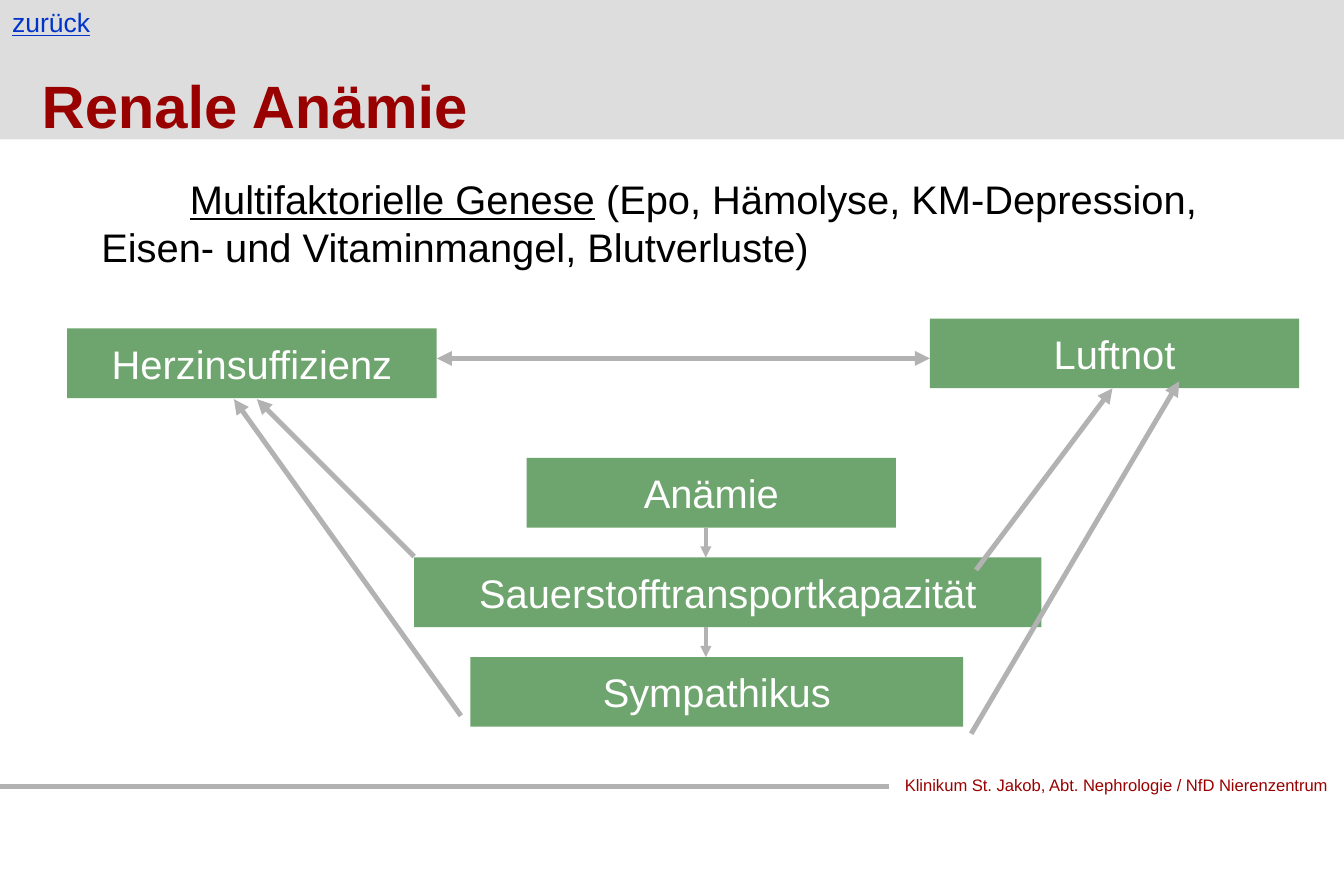
from dataclasses import dataclass

from lxml.etree import SubElement
from pptx import Presentation
from pptx.dml.color import RGBColor
from pptx.enum.shapes import MSO_CONNECTOR, MSO_SHAPE
from pptx.enum.text import MSO_ANCHOR, PP_ALIGN
from pptx.oxml.ns import qn
from pptx.slide import Slide
from pptx.util import Inches, Length, Pt

# Grid: twelve columns and twelve rows to the inch
COLUMNS, ROWS, CELL = 135, 90, Inches(1) // 12
BOX_WIDTH, BOX_HEIGHT = 37.1, 7
AXIS = 70.9

FONT = "Arial"
BAND_GREY = RGBColor(0xDD, 0xDD, 0xDD)
LINE_GREY = RGBColor(0xB2, 0xB2, 0xB2)
GREEN = RGBColor(0x6E, 0xA4, 0x6E)
RED = RGBColor(0x99, 0x00, 0x00)
BLUE = RGBColor(0x00, 0x33, 0xCC)
BLACK = RGBColor(0x00, 0x00, 0x00)
WHITE = RGBColor(0xFF, 0xFF, 0xFF)


@dataclass(frozen=True)
class Label:
    text: str
    column: float
    row: float
    width: float
    height: float
    size: float = 24
    color: RGBColor = WHITE
    align: PP_ALIGN = PP_ALIGN.CENTER
    anchor: MSO_ANCHOR = MSO_ANCHOR.MIDDLE
    wrap: bool = False
    bold: bool = False
    underlined: str = ""
    first_indent: float = 0


@dataclass(frozen=True)
class Line:
    start: tuple[float, float]
    end: tuple[float, float]
    width: float = 3
    ends: tuple[str, ...] = ("tailEnd",)


FOOTER = Label("Klinikum St. Jakob, Abt. Nephrologie / NfD Nierenzentrum",
               87.8, 77.2, 46.7, 3.2, 10, RED, PP_ALIGN.RIGHT, MSO_ANCHOR.TOP, True)
CAUSES = Label(" (Epo, Hämolyse, KM-Depression, Eisen- und Vitaminmangel, Blutverluste)",
               9, 17, 114.7, 10.9, 24, BLACK, PP_ALIGN.LEFT, MSO_ANCHOR.TOP, True,
               underlined="Multifaktorielle Genese", first_indent=8.9)
TITLE = Label("Renale Anämie", 3, 3, 131.6, 15, 36, RED, PP_ALIGN.LEFT,
              wrap=True, bold=True)
BACK = Label("", 0, 0, 10.3, 4.4, 16, BLUE, anchor=MSO_ANCHOR.TOP, underlined="zurück")

BOXES = (
    Label("Herzinsuffizienz", 6.75, 33, BOX_WIDTH, BOX_HEIGHT),
    Label("Luftnot", 93.4, 32, BOX_WIDTH, BOX_HEIGHT),
    Label("Sympathikus", 47.25, 66, 49.5, BOX_HEIGHT),
    Label("Anämie", 52.9, 46, BOX_WIDTH, BOX_HEIGHT),
    Label("Sauerstofftransportkapazität", 41.6, 56, 63, BOX_HEIGHT),
)

FOOTER_RULE = Line((0, 79.05), (89.25, 79.05), ends=())
ARROWS = (
    Line((AXIS, 53), (AXIS, 56), 2.25),
    Line((98.05, 57.25), (111.75, 39)),
    Line((41.6, 55.9), (25.8, 40.1)),
    Line((AXIS, 63), (AXIS, 66), 2.25),
    Line((46.3, 71.9), (23.5, 40.1)),
    Line((97.55, 73.7), (118.45, 38.3)),
    Line((43.9, 36), (93.4, 36), ends=("headEnd", "tailEnd")),
)


def cells(*counts: float) -> list[Length]:
    return [Length(round(count * CELL)) for count in counts]


def draw_rectangle(page: Slide, column: float, row: float, width: float,
                   height: float, color: RGBColor):
    box = page.shapes.add_shape(MSO_SHAPE.RECTANGLE, *cells(column, row, width, height))
    box.shadow.inherit = False
    box.fill.solid()
    box.fill.fore_color.rgb = color
    box.line.fill.background()
    return box


def write_label(box, label: Label) -> None:
    frame = box.text_frame
    frame.word_wrap = label.wrap
    frame.vertical_anchor = label.anchor
    para = frame.paragraphs[0]
    para.alignment = label.align
    if label.first_indent:
        properties = para._p.get_or_add_pPr()
        properties.set("marL", "0")
        properties.set("indent", str(cells(label.first_indent)[0]))
    para.font.name = FONT
    para.font.size = Pt(label.size)
    para.font.bold = label.bold
    para.font.color.rgb = label.color
    if label.underlined:
        span = para.add_run()
        span.text = label.underlined
        span.font.underline = True
    if label.text:
        para.add_run().text = label.text


def draw_text(page: Slide, label: Label) -> None:
    place = cells(label.column, label.row, label.width, label.height)
    write_label(page.shapes.add_textbox(*place), label)


def draw_box(page: Slide, label: Label) -> None:
    box = draw_rectangle(page, label.column, label.row, label.width, label.height, GREEN)
    write_label(box, label)


def draw_line(page: Slide, line: Line) -> None:
    connector = page.shapes.add_connector(
        MSO_CONNECTOR.STRAIGHT, *cells(*line.start, *line.end))
    connector.line.color.rgb = LINE_GREY
    connector.line.width = Pt(line.width)
    outline = connector.line._get_or_add_ln()
    for end in line.ends:
        SubElement(outline, qn(f"a:{end}"), type="triangle")
    SubElement(connector._element.spPr, qn("a:effectLst"))


def main() -> None:
    deck = Presentation()
    deck.slide_width, deck.slide_height = cells(COLUMNS, ROWS)
    page = deck.slides.add_slide(deck.slide_layouts[6])

    # Header band and footer
    draw_rectangle(page, 0, 0, COLUMNS, 14, BAND_GREY)
    draw_text(page, FOOTER)
    draw_line(page, FOOTER_RULE)

    # Causes and title
    draw_text(page, CAUSES)
    draw_text(page, TITLE)

    # Diagram
    for box in BOXES:
        draw_box(page, box)
    for arrow in ARROWS:
        draw_line(page, arrow)

    # Way back
    draw_text(page, BACK)
    deck.save("out.pptx")


if __name__ == "__main__":
    main()
